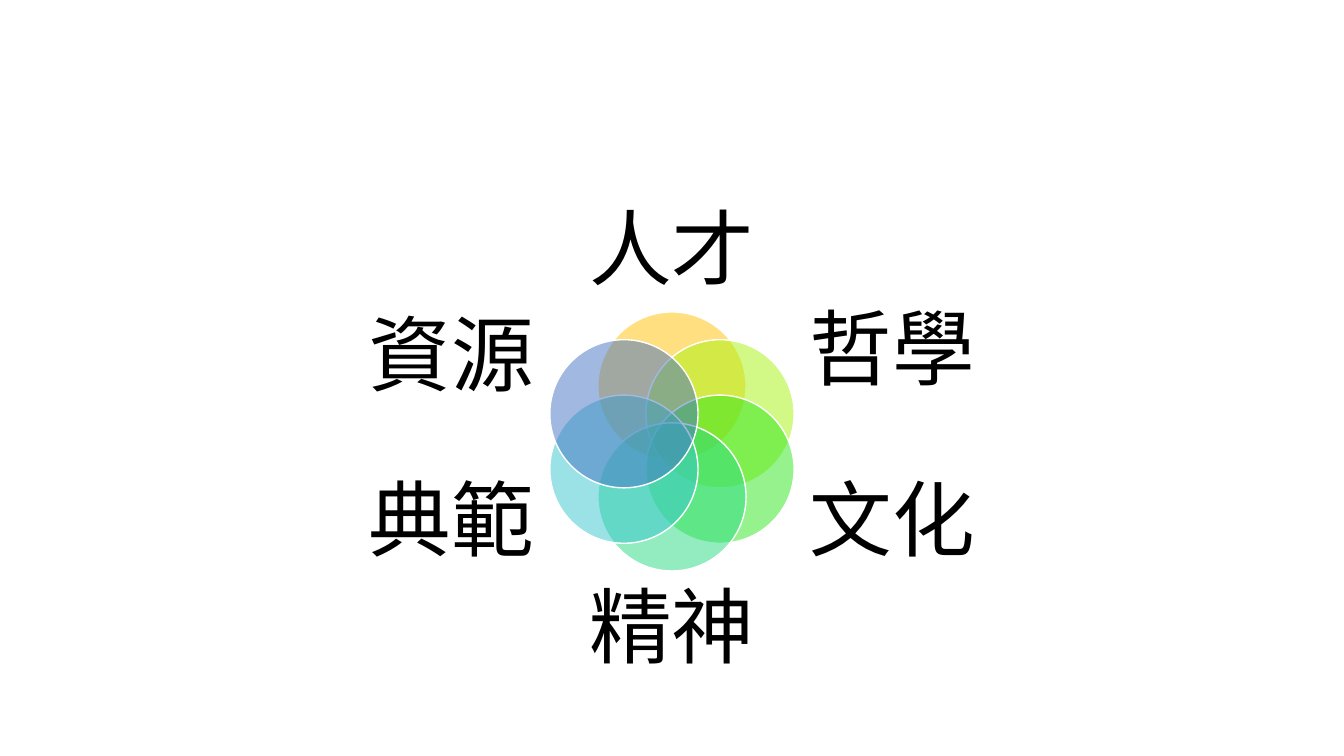
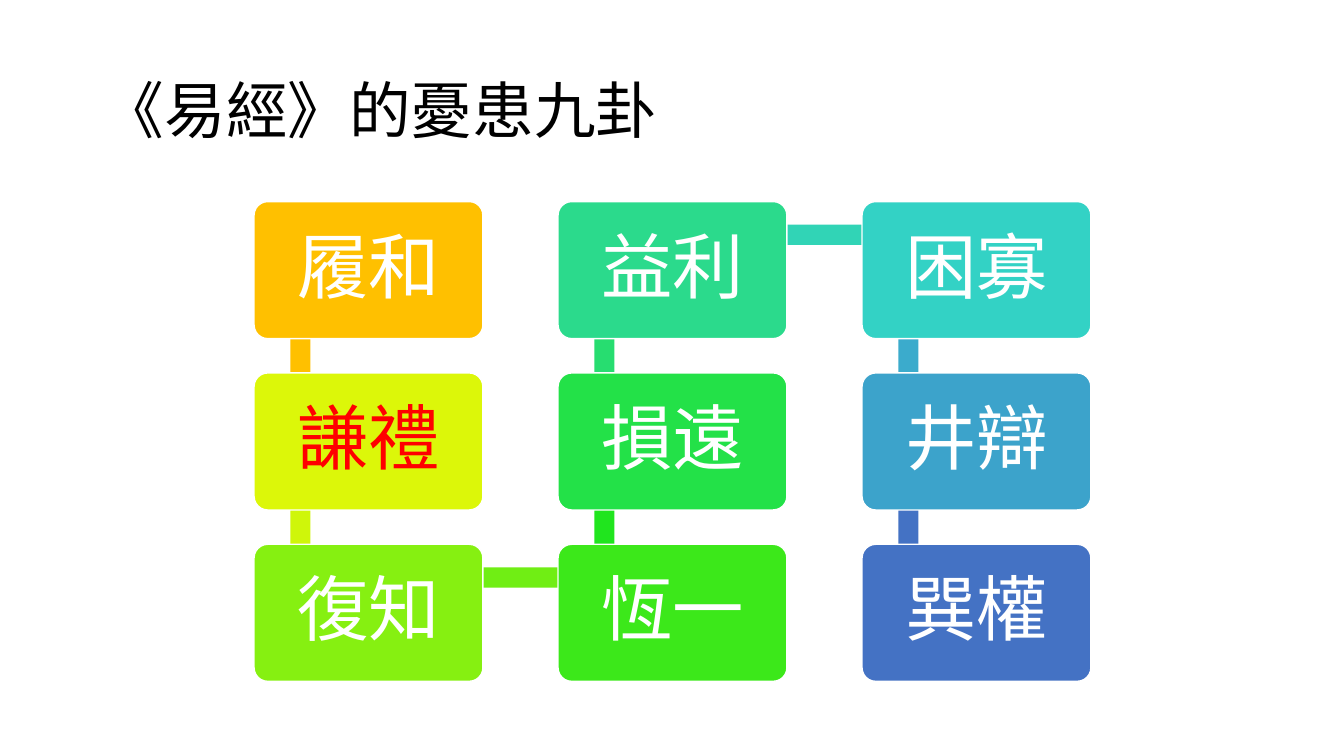
from dataclasses import dataclass
from math import cos, pi, sin

from lxml.etree import SubElement as add_node
from pptx import Presentation
from pptx.dml.color import RGBColor as Rgb
from pptx.enum.shapes import MSO_SHAPE as Kind
from pptx.enum.text import MSO_ANCHOR as Anchor
from pptx.enum.text import MSO_AUTO_SIZE as Fit
from pptx.enum.text import PP_ALIGN as Align
from pptx.oxml.ns import qn
from pptx.util import Inches, Pt

WIDE, HIGH = 13.33, 7.5


@dataclass(frozen=True)
class Theme:
    font: str = "Noto Sans CJK SC"
    ink: str = "000000"
    paper: str = "FFFFFF"
    alert: str = "FF0000"
    title: int = 44
    label: int = 59
    card: int = 51
    edge: int = 1


LOOK = Theme()

# Word, petal colour, and label offset from the hub as shares of the slide
PETALS = [
    ("人才", "FFC000", 0, -0.25),
    ("哲學", "A7F30E", 0.164, -0.117),
    ("文化", "2EE71C", 0.164, 0.109),
    ("精神", "29DB80", 0, 0.25),
    ("典範", "37C6CF", -0.164, 0.109),
    ("資源", "4472C4", -0.164, -0.109),
]

# Word, card colour, and colour of the bar to the next card
CARDS = [
    ("履和", "FFC000", "FFC000"),
    ("謙禮", "DCF709", "CFF60A"),
    ("復知", "86F011", "70EE14"),
    ("恆一", "3CE81A", "20E51E"),
    ("損遠", "23E148", "27DD70"),
    ("益利", "2BDA8C", "31D4B6"),
    ("困寡", "33D2C5", "3BABCC"),
    ("井辯", "3CA3CB", "4472C4"),
    ("巽權", "4472C4", None),
]
ALERTS = {"謙禮"}


def write(shape, text, size, color=LOOK.ink, align=Align.CENTER, pad=0.0):
    frame = shape.text_frame
    frame.auto_size = Fit.NONE
    frame.word_wrap = True
    frame.vertical_anchor = Anchor.MIDDLE
    frame.margin_left = frame.margin_right = Inches(pad)
    frame.margin_top = frame.margin_bottom = Inches(pad)
    line = frame.paragraphs[0]
    line.alignment = align
    line.line_spacing = 0.9
    run = line.add_run()
    run.text = text
    run.font.size = Pt(size)
    run.font.name = LOOK.font
    run.font.color.rgb = Rgb.from_string(color)
    add_node(run.font._element, qn("a:ea"), typeface=LOOK.font)


def draw(slide, kind, box, fill, edge=None, alpha=None):
    """Add a filled shape; alpha is its opacity in percent."""
    shape = slide.shapes.add_shape(kind, *map(Inches, box))
    shape.shadow.inherit = False
    shape.fill.solid()
    shape.fill.fore_color.rgb = Rgb.from_string(fill)
    if alpha is not None:
        tint = shape.element.spPr.find(qn("a:solidFill"))[0]
        add_node(tint, qn("a:alpha"), val=str(alpha * 1000))
    if edge:
        shape.line.color.rgb = Rgb.from_string(edge)
        shape.line.width = Pt(LOOK.edge)
    else:
        shape.line.fill.background()
    return shape


def center(x, y, wide, high):
    """Turn a centre and a size into left, top, width, height."""
    return x - wide / 2, y - high / 2, wide, high


def set_title(slide, text):
    title = slide.shapes.title
    title.left, title.top = Inches(0.92), Inches(0.4)
    title.width, title.height = Inches(11.5), Inches(1.45)
    write(title, text, LOOK.title, align=Align.LEFT, pad=0.1)


def add_flower(slide, x, y, reach=0.55, size=1.47):
    """Overlap equal circles around a hub, each with an outer label."""
    for i, (word, color, right, down) in enumerate(PETALS):
        turn = 2 * pi * i / len(PETALS)
        spot = x + reach * sin(turn), y - reach * cos(turn)
        draw(slide, Kind.OVAL, center(*spot, size, size), color,
             edge=LOOK.paper, alpha=50)
        box = center(x + right * WIDE, y + down * HIGH, 1.83, 1.22)
        write(slide.shapes.add_textbox(*map(Inches, box)), word, LOOK.label)


def add_snake(slide, left, top, rows=3):
    """Lay cards down one column and up the next, joined by bars."""
    wide, high, col_gap, row_gap = 2.27, 1.36, 3.015, 1.7
    thick = 0.2

    def place(i):
        col, row = divmod(i, rows)
        if col % 2:
            row = rows - 1 - row
        return left + col * col_gap, top + row * row_gap

    for i, (word, color, bar) in enumerate(CARDS):
        x, y = place(i)
        if bar:
            next_x, next_y = place(i + 1)
            mid = (x + next_x) / 2 + 0.46, (y + next_y) / 2 + 0.33
            span = (max(abs(next_x - x), thick), max(abs(next_y - y), thick))
            draw(slide, Kind.RECTANGLE, center(*mid, *span), bar)
        card = draw(slide, Kind.ROUNDED_RECTANGLE, (x, y, wide, high), color,
                    edge=LOOK.paper)
        card.adjustments[0] = 0.1
        ink = LOOK.alert if word in ALERTS else LOOK.paper
        write(card, word, LOOK.card, color=ink, pad=0.21)


def main():
    deck = Presentation()
    deck.slide_width, deck.slide_height = Inches(WIDE), Inches(HIGH)
    titled, blank = deck.slide_layouts[5], deck.slide_layouts[6]

    add_flower(deck.slides.add_slide(blank), WIDE / 2, 4.38)

    slide = deck.slides.add_slide(titled)
    set_title(slide, "《易經》的憂患九卦")
    add_snake(slide, 2.52, 2)

    deck.save("out.pptx")


if __name__ == "__main__":
    main()
